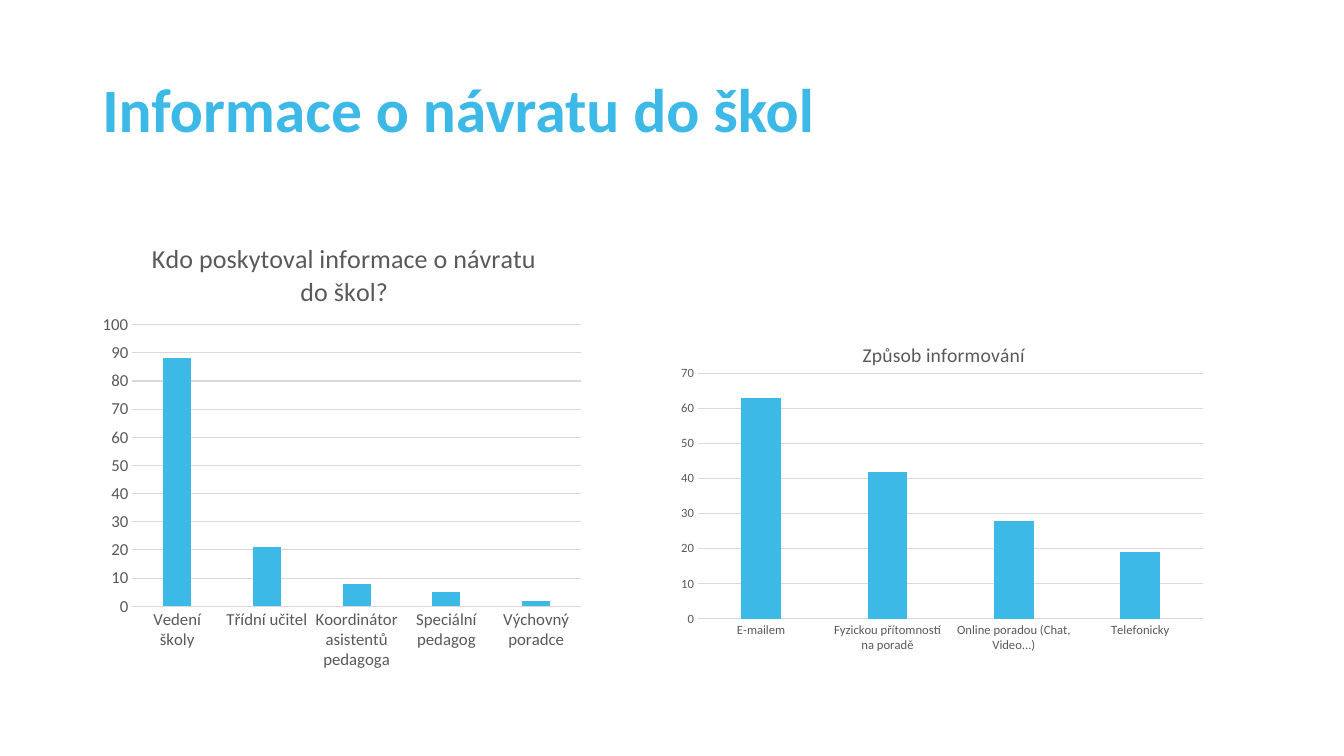
from dataclasses import dataclass

from lxml.etree import SubElement
from pptx import Presentation
from pptx.chart.data import CategoryChartData
from pptx.dml.color import RGBColor
from pptx.enum.chart import XL_CHART_TYPE as ChartType, XL_TICK_MARK as TickMark
from pptx.enum.text import MSO_ANCHOR as Anchor
from pptx.oxml.ns import qn
from pptx.util import Emu, Pt

EMU_PER_PX = 9525
FONT = "Calibri"
COLOURS = {"accent": "3CB9E6", "text": "595959", "grid": "D9D9D9"}


@dataclass(frozen=True)
class Box:
    left: int
    top: int
    width: int
    height: int

    def emu(self) -> list[Emu]:
        return [px(n) for n in (self.left, self.top, self.width, self.height)]


@dataclass(frozen=True)
class BarChart:
    box: Box
    title: str
    title_size: float
    title_place: tuple[float, float]  # x, y as shares of the chart
    plot_place: tuple[float, float, float, float]  # x, y, w, h as shares
    axis_size: int
    top_value: int
    values: dict[str, int]


BAR_CHARTS = [
    BarChart(
        Box(88, 202, 475, 447), "Kdo poskytoval informace o návratu do škol?",
        18.6, (0.11, 0.05), (0.08, 0.24, 0.9, 0.6), 12, 100,
        {"Vedení školy": 88, "Třídní učitel": 21, "Koordinátor asistentů pedagoga": 8,
         "Speciální pedagog": 5, "Výchovný poradce": 2},
    ),
    BarChart(
        Box(633, 304, 529, 344), "Způsob informování",
        14, (0.35, 0.05), (0.06, 0.15, 0.91, 0.68), 9, 70,
        {"E-mailem": 63, "Fyzickou přítomností na poradě": 42,
         "Online poradou (Chat, Video...)": 28, "Telefonicky": 19},
    ),
]


def px(length: int) -> Emu:
    return Emu(length * EMU_PER_PX)


def colour(name: str) -> RGBColor:
    return RGBColor.from_string(COLOURS[name])


def style_font(font, size: float, name: str, bold: bool = False) -> None:
    font.name = FONT
    font.size = Pt(size)
    font.bold = bold
    font.color.rgb = colour(name)


def style_line(line) -> None:
    line.color.rgb = colour("grid")
    line.width = Pt(0.75)


def set_layout(parent, index: int, place: tuple[float, ...], inner: bool = False) -> None:
    """Give a chart part a manual position, in a c:layout child at the index."""
    layout = parent.find(qn("c:layout"))
    if layout is None:
        layout = SubElement(parent, qn("c:layout"))
        parent.insert(index, layout)
    manual = SubElement(layout, qn("c:manualLayout"))
    settings = [("layoutTarget", "inner")] if inner else []
    settings += [("xMode", "edge"), ("yMode", "edge")]
    settings += [(key, str(share)) for key, share in zip("xywh", place)]
    for tag, value in settings:
        SubElement(manual, qn(f"c:{tag}")).set("val", value)


def add_heading(page, box: Box, text: str) -> None:
    frame = page.shapes.add_textbox(*box.emu()).text_frame
    frame.word_wrap = True
    frame.vertical_anchor = Anchor.MIDDLE
    frame.text = text
    para = frame.paragraphs[0]
    para.line_spacing = 0.9
    style_font(para.runs[0].font, 44, "accent", bold=True)


def add_bar_chart(page, item: BarChart) -> None:
    data = CategoryChartData()
    data.categories = list(item.values)
    data.add_series("Series 1", list(item.values.values()))
    chart = page.shapes.add_chart(ChartType.COLUMN_CLUSTERED, *item.box.emu(), data).chart
    chart.has_legend = False
    style_font(chart.font, item.axis_size, "text")

    # Title
    chart.has_title = True
    frame = chart.chart_title.text_frame
    frame.text = item.title
    style_font(frame.paragraphs[0].runs[0].font, item.title_size, "text")

    # Places of the title and the plot
    chart_part = chart._chartSpace.chart
    set_layout(chart_part.find(qn("c:title")), 1, item.title_place)
    set_layout(chart_part.find(qn("c:plotArea")), 0, item.plot_place, inner=True)

    # Bars
    plot = chart.plots[0]
    plot.gap_width = 219
    plot.overlap = -27
    plot.vary_by_categories = False
    bars = plot.series[0].format.fill
    bars.solid()
    bars.fore_color.rgb = colour("accent")

    # Axes
    for axis in (chart.category_axis, chart.value_axis):
        axis.major_tick_mark = TickMark.NONE
        axis.minor_tick_mark = TickMark.NONE
        style_font(axis.tick_labels.font, item.axis_size, "text")
    style_line(chart.category_axis.format.line)
    values = chart.value_axis
    values.minimum_scale = 0
    values.maximum_scale = item.top_value
    values.major_unit = 10
    values.format.line.fill.background()
    values.has_major_gridlines = True
    style_line(values.major_gridlines.format.line)


def main() -> None:
    deck = Presentation()
    deck.slide_width = px(1280)
    deck.slide_height = px(720)
    page = deck.slides.add_slide(deck.slide_layouts[6])
    add_heading(page, Box(88, 38, 1104, 139), "Informace o návratu do škol")
    for item in BAR_CHARTS:
        add_bar_chart(page, item)
    deck.save("out.pptx")


if __name__ == "__main__":
    main()
